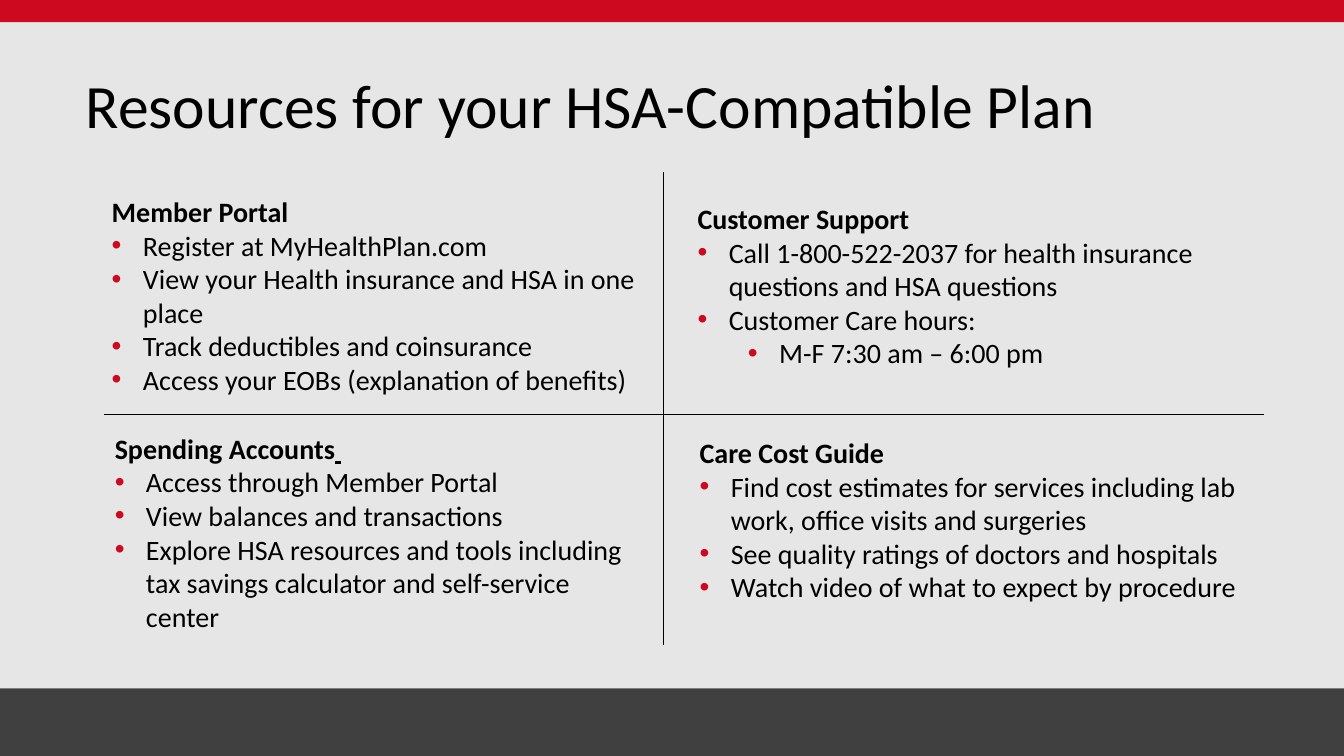
from lxml.etree import SubElement
from pptx import Presentation
from pptx.dml.color import RGBColor
from pptx.enum.shapes import MSO_CONNECTOR, MSO_SHAPE
from pptx.enum.text import MSO_ANCHOR, MSO_AUTO_SIZE, PP_ALIGN
from pptx.oxml.ns import qn
from pptx.util import Inches, Pt

BLACK = RGBColor(0x00, 0x00, 0x00)
RED = RGBColor(0xCD, 0x09, 0x20)
CHARCOAL = RGBColor(0x40, 0x40, 0x40)
PANEL_GREY = RGBColor(0xD0, 0xCE, 0xCE)
PAGE_GREY = RGBColor(0xF7, 0xF6, 0xF6)

WIDTH, HEIGHT = 13.33, 7.5
FOOTER_TOP = 6.83

# Heading, left, top, width, height, bullets as (level, text)
TOPICS = [
    ("Member Portal", 1.01, 1.88, 5.53, 2.12, [
        (0, "Register at MyHealthPlan.com"),
        (0, "View your Health insurance and HSA in one place"),
        (0, "Track deductibles and coinsurance"),
        (0, "Access your EOBs (explanation of benefits)"),
    ]),
    ("Customer Support", 6.82, 1.95, 5.73, 1.78, [
        (0, "Call 1-800-522-2037 for health insurance questions and HSA questions"),
        (0, "Customer Care hours:"),
        (1, "M-F 7:30 am – 6:00 pm"),
    ]),
    ("Spending Accounts", 1.04, 4.23, 5.37, 2.12, [
        (0, "Access through Member Portal"),
        (0, "View balances and transactions"),
        (0, "Explore HSA resources and tools including tax savings calculator "
            "and self-service center"),
    ]),
    ("Care Cost Guide", 6.84, 4.27, 5.92, 1.78, [
        (0, "Find cost estimates for services including lab work, "
            "office visits and surgeries"),
        (0, "See quality ratings of doctors and hospitals"),
        (0, "Watch video of what to expect by procedure"),
    ]),
]


class SlideBuilder:
    """Holds the text style and the slide being built."""

    text_format = {"name": "Calibri", "size": Pt(20)}
    bullet_indent = 0.31
    level_step = 0.5

    def __init__(self, page):
        self.page = page
        fill = page.background.fill
        fill.solid()
        fill.fore_color.rgb = PAGE_GREY

    def format_font(self, font, **changes):
        for name, value in {**self.text_format, **changes}.items():
            setattr(font, name, value)
        font.color.rgb = BLACK

    def title(self, text, left, top, width, height):
        title = self.page.shapes.title
        place = {"left": left, "top": top, "width": width, "height": height}
        for name, value in place.items():
            setattr(title, name, Inches(value))
        frame = title.text_frame
        frame.text = text
        frame.word_wrap = True
        frame.auto_size = MSO_AUTO_SIZE.NONE
        frame.vertical_anchor = MSO_ANCHOR.MIDDLE
        para = frame.paragraphs[0]
        para.alignment = PP_ALIGN.LEFT
        para.line_spacing = 0.9
        self.format_font(para.runs[0].font, size=Pt(44))

    def band(self, top, height, color, opacity=100):
        """Add a full-width rectangle behind the title."""
        band = self.page.shapes.add_shape(
            MSO_SHAPE.RECTANGLE, 0, Inches(top), Inches(WIDTH), Inches(height))
        band.shadow.inherit = False
        band.fill.solid()
        band.fill.fore_color.rgb = color
        band.line.fill.background()
        if opacity < 100:
            color_node = next(band.element.spPr.iter(qn("a:srgbClr")))
            SubElement(color_node, qn("a:alpha"), val=str(opacity * 1000))
        self.page.shapes.title.element.addprevious(band.element)

    def bullet(self, para, level):
        indent = Inches(self.bullet_indent)
        para.level = level
        properties = para._p.get_or_add_pPr()
        properties.set("marL", str(indent + Inches(level * self.level_step)))
        properties.set("indent", str(-indent))
        color = SubElement(properties, qn("a:buClr"))
        SubElement(color, qn("a:srgbClr"), val=str(RED))
        SubElement(properties, qn("a:buFont"), typeface="Arial")
        SubElement(properties, qn("a:buChar"), char="•")

    def topic(self, heading, left, top, width, height, bullets):
        box = self.page.shapes.add_textbox(
            Inches(left), Inches(top), Inches(width), Inches(height))
        frame = box.text_frame
        frame.word_wrap = True
        frame.auto_size = MSO_AUTO_SIZE.SHAPE_TO_FIT_TEXT
        span = frame.paragraphs[0].add_run()
        span.text = heading
        self.format_font(span.font, bold=True)
        for level, text in bullets:
            para = frame.add_paragraph()
            self.bullet(para, level)
            span = para.add_run()
            span.text = text
            self.format_font(span.font)
        return frame

    def divider(self, *ends):
        line = self.page.shapes.add_connector(
            MSO_CONNECTOR.STRAIGHT, *(Inches(end) for end in ends))
        line.line.color.rgb = BLACK
        line.line.width = Pt(0.5)
        SubElement(line.element.spPr, qn("a:effectLst"))


def main():
    deck = Presentation()
    deck.slide_width, deck.slide_height = Inches(WIDTH), Inches(HEIGHT)
    builder = SlideBuilder(
        deck.slides.add_slide(deck.slide_layouts.get_by_name("Title Only")))

    builder.band(0, FOOTER_TOP, PANEL_GREY, opacity=40)
    builder.band(FOOTER_TOP, HEIGHT - FOOTER_TOP, CHARCOAL)
    builder.band(0, 0.22, RED)
    builder.title("Resources for your HSA-Compatible Plan", 0.75, 0.44, 11.5, 1.27)

    frames = {topic[0]: builder.topic(*topic) for topic in TOPICS}
    underlined_space = frames["Spending Accounts"].paragraphs[0].add_run()
    underlined_space.text = " "
    builder.format_font(underlined_space.font, italic=True, underline=True)

    builder.divider(6.58, 1.71, 6.58, 6.4)
    builder.divider(1.03, 4.11, 12.54, 4.11)
    deck.save("out.pptx")


if __name__ == "__main__":
    main()
